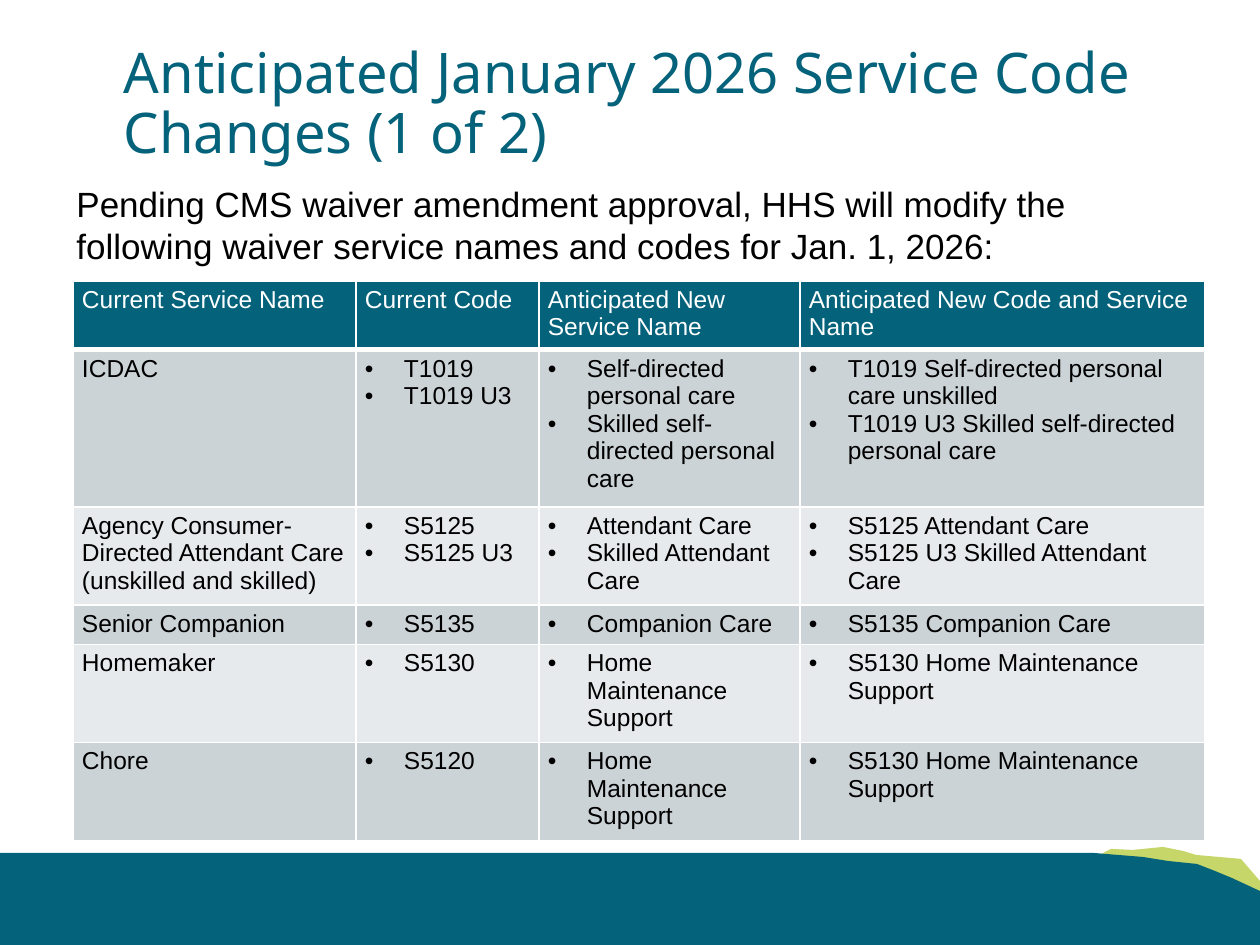
from dataclasses import dataclass

from lxml.etree import SubElement
from pptx import Presentation
from pptx.dml.color import RGBColor
from pptx.enum.text import MSO_ANCHOR, MSO_AUTO_SIZE, PP_ALIGN
from pptx.oxml.ns import qn
from pptx.util import Emu, Pt

PX = 7257  # EMU per pixel, 126 pixels to the inch


@dataclass(frozen=True)
class Theme:
    teal: str = "04627A"
    lime: str = "C6D668"
    white: str = "FFFFFF"
    black: str = "000000"
    dark_band: str = "CCD3D7"
    light_band: str = "E7EAEC"
    heading_font: str = "Noto Sans"
    body_font: str = "Arial"
    title_size: int = 32
    intro_size: int = 20
    table_size: int = 14


theme = Theme()


def write(frame, *lines, size, color, font=theme.body_font, spacing=None, bulleted=False):
    """Fill a text frame with one left-aligned paragraph per line."""
    for index, line in enumerate(lines):
        paragraph = frame.add_paragraph() if index else frame.paragraphs[0]
        paragraph.text = line
        paragraph.alignment = PP_ALIGN.LEFT
        if spacing:
            paragraph.line_spacing = spacing
        if bulleted:
            properties = paragraph._p.get_or_add_pPr()
            properties.set("marL", str(39 * PX))
            properties.set("indent", str(-39 * PX))
            SubElement(properties, qn("a:buFont"), typeface="Arial")
            SubElement(properties, qn("a:buChar"), char="•")
        paragraph.font.size = Pt(size)
        paragraph.font.name = font
        paragraph.font.color.rgb = RGBColor.from_string(color)


def add_borders(cell, **widths):
    """Draw white cell borders; widths in points, keyed by a:tcPr element name."""
    properties = cell._tc.get_or_add_tcPr()
    for side, width in widths.items():
        line = SubElement(properties, qn(f"a:{side}"), w=str(Pt(width)))
        fill = SubElement(line, qn("a:solidFill"))
        SubElement(fill, qn("a:srgbClr"), val=theme.white)


presentation = Presentation()
presentation.slide_width = Emu(1260 * PX)
presentation.slide_height = Emu(945 * PX)
slide = presentation.slides.add_slide(presentation.slide_layouts[5])

# Footer hills
lime_hill = [(1111, 849), (1086, 862), (1261, 896), (1260, 881), (1241, 859),
             (1196, 855), (1183, 851), (1163, 847), (1133, 850)]
teal_ground = [(0, 853), (1094, 853), (1143, 857), (1168, 861), (1197, 864),
               (1215, 871), (1232, 878), (1260, 891), (1260, 945), (0, 945)]
for outline, color in ((lime_hill, theme.lime), (teal_ground, theme.teal)):
    builder = slide.shapes.build_freeform(*outline[0], scale=PX)
    builder.add_line_segments(outline[1:], close=True)
    hill = builder.convert_to_shape()
    hill.shadow.inherit = False
    hill.fill.solid()
    hill.fill.fore_color.rgb = RGBColor.from_string(color)
    hill.line.fill.background()

# Title and introduction
title = slide.shapes.title
title.left, title.top, title.width, title.height = (
    Emu(v * PX) for v in (111, 14, 1086, 183))
title.text_frame.word_wrap = True
title.text_frame.auto_size = MSO_AUTO_SIZE.NONE
title.text_frame.vertical_anchor = MSO_ANCHOR.MIDDLE
write(title.text_frame, "Anticipated January 2026 Service Code Changes (1 of 2)",
      size=theme.title_size, color=theme.teal, font=theme.heading_font, spacing=0.9)

intro = slide.shapes.add_textbox(*(Emu(v * PX) for v in (64, 176, 1133, 97)))
intro.text_frame.word_wrap = True
write(intro.text_frame,
      "Pending CMS waiver amendment approval, HHS will modify the following "
      "waiver service names and codes for Jan. 1, 2026:",
      size=theme.intro_size, color=theme.black)

# Service code table: each body cell after the first is a list of bullets
headers = ["Current Service Name", "Current Code", "Anticipated New Service Name",
           "Anticipated New Code and Service Name"]
services = [
    ("ICDAC", ["T1019", "T1019 U3"],
     ["Self-directed personal care", "Skilled self-directed personal care"],
     ["T1019 Self-directed personal care unskilled",
      "T1019 U3 Skilled self-directed personal care"]),
    ("Agency Consumer-Directed Attendant Care (unskilled and skilled)",
     ["S5125", "S5125 U3"], ["Attendant Care", "Skilled Attendant Care"],
     ["S5125 Attendant Care", "S5125 U3 Skilled Attendant Care"]),
    ("Senior Companion", ["S5135"], ["Companion Care"], ["S5135 Companion Care"]),
    ("Homemaker", ["S5130"], ["Home Maintenance Support"],
     ["S5130 Home Maintenance Support"]),
    ("Chore", ["S5120"], ["Home Maintenance Support"],
     ["S5130 Home Maintenance Support"]),
]
column_widths = [283, 183, 261, 405]
row_heights = [67, 157, 98, 39, 97, 98]
table = slide.shapes.add_table(
    len(row_heights), len(column_widths), Emu(73 * PX), Emu(281 * PX),
    Emu(sum(column_widths) * PX), Emu(sum(row_heights) * PX)).table
for column, width in zip(table.columns, column_widths):
    column.width = Emu(width * PX)
for row, height in zip(table.rows, row_heights):
    row.height = Emu(height * PX)

for row_index, entries in enumerate([headers, *services]):
    is_header = row_index == 0
    band = theme.dark_band if row_index % 2 else theme.light_band
    for column_index, entry in enumerate(entries):
        cell = table.cell(row_index, column_index)
        cell.margin_left = cell.margin_right = Emu(9 * PX)
        cell.margin_top = cell.margin_bottom = Emu(5 * PX)
        bulleted = isinstance(entry, list)
        write(cell.text_frame, *(entry if bulleted else [entry]), bulleted=bulleted,
              size=theme.table_size, color=theme.white if is_header else theme.black)
        add_borders(cell, lnL=1, lnR=1, lnT=3 if row_index == 1 else 1,
                    lnB=3 if is_header else 1)
        cell.fill.solid()
        cell.fill.fore_color.rgb = RGBColor.from_string(theme.teal if is_header else band)

presentation.save("out.pptx")
